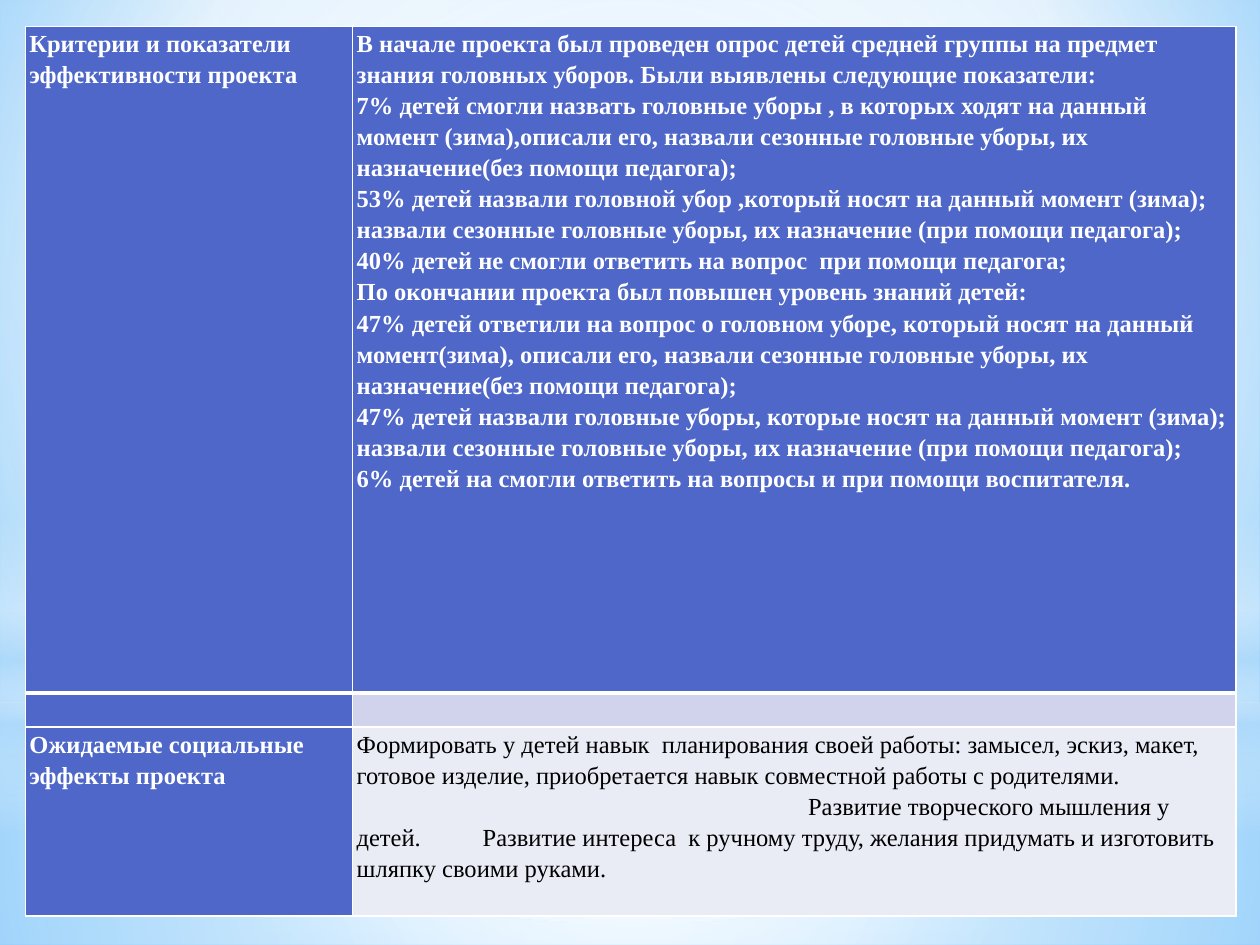
"""Build a slide with a two-column table of project criteria and expected effects."""
from dataclasses import dataclass
from typing import Optional

import pptx
import pptx.dml.color
import pptx.enum.shapes
import pptx.oxml
import pptx.oxml.ns
import pptx.util

Cm = pptx.util.Cm
Pt = pptx.util.Pt
qn = pptx.oxml.ns.qn
SHAPES = pptx.enum.shapes.MSO_SHAPE
WIDTH, HEIGHT = 25.4, 19.05
FONT = "Times New Roman"
WHITE, BLACK, BLUE, SKY = "FFFFFF", "000000", "4E67C8", "B4DCFA"
CENTER = (50, 50, 50, 50)


@dataclass(frozen=True)
class Gradient:
    stops: tuple
    focus: Optional[tuple] = None


@dataclass(frozen=True)
class Glow:
    kind: int
    top: float
    height: float
    gradient: Gradient


@dataclass(frozen=True)
class Line:
    text: str
    indent: float = 0
    tab: Optional[float] = None


@dataclass(frozen=True)
class CellContent:
    fill: str
    lines: tuple = ()
    color: str = WHITE
    bold: bool = True


BACKGROUND = Gradient(((0, "9ED5FF", 100), (60, WHITE, 100), (100, "5BB9FF", 100)),
                      (20, 10, 20, 60))
GLOWS = (
    Glow(SHAPES.RECTANGLE, 14.17, 4.88,
         Gradient(((0, WHITE, 91), (37, WHITE, 76), (100, SKY, 79)), CENTER)),
    Glow(SHAPES.RECTANGLE, 0, 14.17,
         Gradient(((0, WHITE, 89), (48, WHITE, 62), (100, SKY, 79)), CENTER)),
    Glow(SHAPES.RECTANGLE, 10.46, 6.35,
         Gradient(((0, WHITE, 0), (29, WHITE, 30), (45, SKY, 40),
                   (55, WHITE, 26), (65, SKY, 60), (100, WHITE, 0)))),
    Glow(SHAPES.OVAL, 4.45, 14.17,
         Gradient(((0, WHITE, 100), (56, WHITE, 0)), CENTER)),
)

COLUMN_WIDTHS = (6.6, 17.81)
ROW_HEIGHTS = (13.44, 0.69, 3.81)
ROWS = (
    (
        CellContent(BLUE, (Line("Критерии и показатели эффективности проекта"),)),
        CellContent(BLUE, (
            Line("В начале проекта был проведен опрос детей средней группы на предмет "
                 "знания головных уборов. Были выявлены следующие показатели:"),
            Line("7% детей смогли назвать головные уборы , в которых ходят на данный "
                 "момент (зима),описали его, назвали сезонные головные уборы, их "
                 "назначение(без помощи педагога);"),
            Line("53% детей назвали головной убор ,который носят на данный момент (зима); "
                 "назвали сезонные головные уборы, их назначение (при помощи педагога);"),
            Line("40% детей не смогли ответить на вопрос  при помощи педагога;"),
            Line("По окончании проекта был повышен уровень знаний детей:"),
            Line("47% детей ответили на вопрос о головном уборе, который носят на данный "
                 "момент(зима), описали его, назвали сезонные головные уборы, их "
                 "назначение(без помощи педагога);"),
            Line("47% детей назвали головные уборы, которые носят на данный момент (зима); "
                 "назвали сезонные головные уборы, их назначение (при помощи педагога);"),
            Line("6% детей на смогли ответить на вопросы и при помощи воспитателя."),
        )),
    ),
    (CellContent(BLUE), CellContent("D0D3EB")),
    (
        CellContent(BLUE, (Line("Ожидаемые социальные эффекты проекта"),)),
        CellContent("E9EBF5", (
            Line("Формировать у детей навык  планирования своей работы: замысел, эскиз, "
                 "макет, готовое изделие, приобретается навык совместной работы с "
                 "родителями."),
            Line("Развитие творческого мышления у детей.\tРазвитие интереса  к ручному "
                 "труду, желания придумать и изготовить  шляпку своими руками.",
                 indent=9.1, tab=9.43),
        ), BLACK, False),
    ),
)


def rgb(value: str) -> pptx.dml.color.RGBColor:
    """Turn a hex string into a colour."""
    return pptx.dml.color.RGBColor.from_string(value)


def apply_gradient(fill, properties, gradient: Gradient) -> None:
    """Swap the fill of a properties element for a gradient."""
    fill.solid()
    stops = "".join(
        f'<a:gs pos="{position * 1000}"><a:srgbClr val="{color}">'
        f'<a:alpha val="{opacity * 1000}"/></a:srgbClr></a:gs>'
        for position, color, opacity in gradient.stops)
    direction = '<a:lin ang="5400000" scaled="0"/>'
    if gradient.focus:
        left, top, right, bottom = (side * 1000 for side in gradient.focus)
        direction = (f'<a:path path="circle"><a:fillToRect l="{left}" t="{top}" '
                     f'r="{right}" b="{bottom}"/></a:path>')
    element = pptx.oxml.parse_xml(
        f'<a:gradFill {pptx.oxml.ns.nsdecls("a")} rotWithShape="1">'
        f'<a:gsLst>{stops}</a:gsLst>{direction}</a:gradFill>')
    properties.replace(properties.find(qn("a:solidFill")), element)


def add_glow(slide, glow: Glow) -> None:
    """Draw one full-width translucent background shape."""
    shape = slide.shapes.add_shape(glow.kind, 0, Cm(glow.top), Cm(WIDTH), Cm(glow.height))
    shape.shadow.inherit = False
    shape.line.fill.background()
    apply_gradient(shape.fill, shape._element.spPr, glow.gradient)


def write_text(paragraph, text: str, *, color: str, bold: bool, size: float = 14,
               indent: float = 0, tab: Optional[float] = None) -> None:
    """Write formatted text into a paragraph."""
    paragraph.line_spacing = 1.15
    paragraph.font.size = Pt(size)
    if indent:
        properties = paragraph._p.get_or_add_pPr()
        properties.set("marL", "0")
        properties.set("indent", str(Cm(indent)))
    if tab:
        tabs = pptx.oxml.parse_xml(
            f'<a:tabLst {pptx.oxml.ns.nsdecls("a")}><a:tab pos="{Cm(tab)}" algn="l"/></a:tabLst>')
        paragraph._p.get_or_add_pPr().find(qn("a:defRPr")).addprevious(tabs)
    run = paragraph.add_run()
    run.text = text
    run.font.name, run.font.size, run.font.bold = FONT, Pt(size), bold
    run.font.color.rgb = rgb(color)


def set_borders(cell, top: float, bottom: float) -> None:
    """Give a cell white borders with the given top and bottom widths."""
    properties = cell._tc.get_or_add_tcPr()
    for index, (side, width) in enumerate((("L", 1), ("R", 1), ("T", top), ("B", bottom))):
        properties.insert(index, pptx.oxml.parse_xml(
            f'<a:ln{side} {pptx.oxml.ns.nsdecls("a")} w="{Pt(width)}"><a:solidFill>'
            f'<a:srgbClr val="{WHITE}"/></a:solidFill></a:ln{side}>'))


def fill_cell(cell, content: CellContent) -> None:
    """Set the fill, margins and text of a cell."""
    cell.fill.solid()
    cell.fill.fore_color.rgb = rgb(content.fill)
    cell.margin_left = cell.margin_right = Cm(0.08)
    cell.margin_top = cell.margin_bottom = 0
    frame = cell.text_frame
    frame.paragraphs[0].font.size = Pt(14)
    for index, line in enumerate(content.lines):
        paragraph = frame.add_paragraph() if index else frame.paragraphs[0]
        write_text(paragraph, line.text, color=content.color, bold=content.bold,
                   indent=line.indent, tab=line.tab)


def add_project_table(slide) -> None:
    """Draw the table of criteria and effects."""
    table = slide.shapes.add_table(
        len(ROWS), len(COLUMN_WIDTHS), Cm(0.51), Cm(0.53),
        Cm(sum(COLUMN_WIDTHS)), Cm(sum(ROW_HEIGHTS))).table
    for column, width in zip(table.columns, COLUMN_WIDTHS):
        column.width = Cm(width)
    for index, (row, height, contents) in enumerate(zip(table.rows, ROW_HEIGHTS, ROWS)):
        row.height = Cm(height)
        for cell, content in zip(row.cells, contents):
            fill_cell(cell, content)
            set_borders(cell, top=3 if index == 1 else 1, bottom=3 if index == 0 else 1)


def main() -> None:
    """Build and save the presentation."""
    presentation = pptx.Presentation()
    presentation.slide_width, presentation.slide_height = Cm(WIDTH), Cm(HEIGHT)
    slide = presentation.slides.add_slide(presentation.slide_layouts[6])
    fill = slide.background.fill
    apply_gradient(fill, slide._element.find(".//" + qn("p:bgPr")), BACKGROUND)
    for glow in GLOWS:
        add_glow(slide, glow)
    add_project_table(slide)
    presentation.save("out.pptx")


if __name__ == "__main__":
    main()
